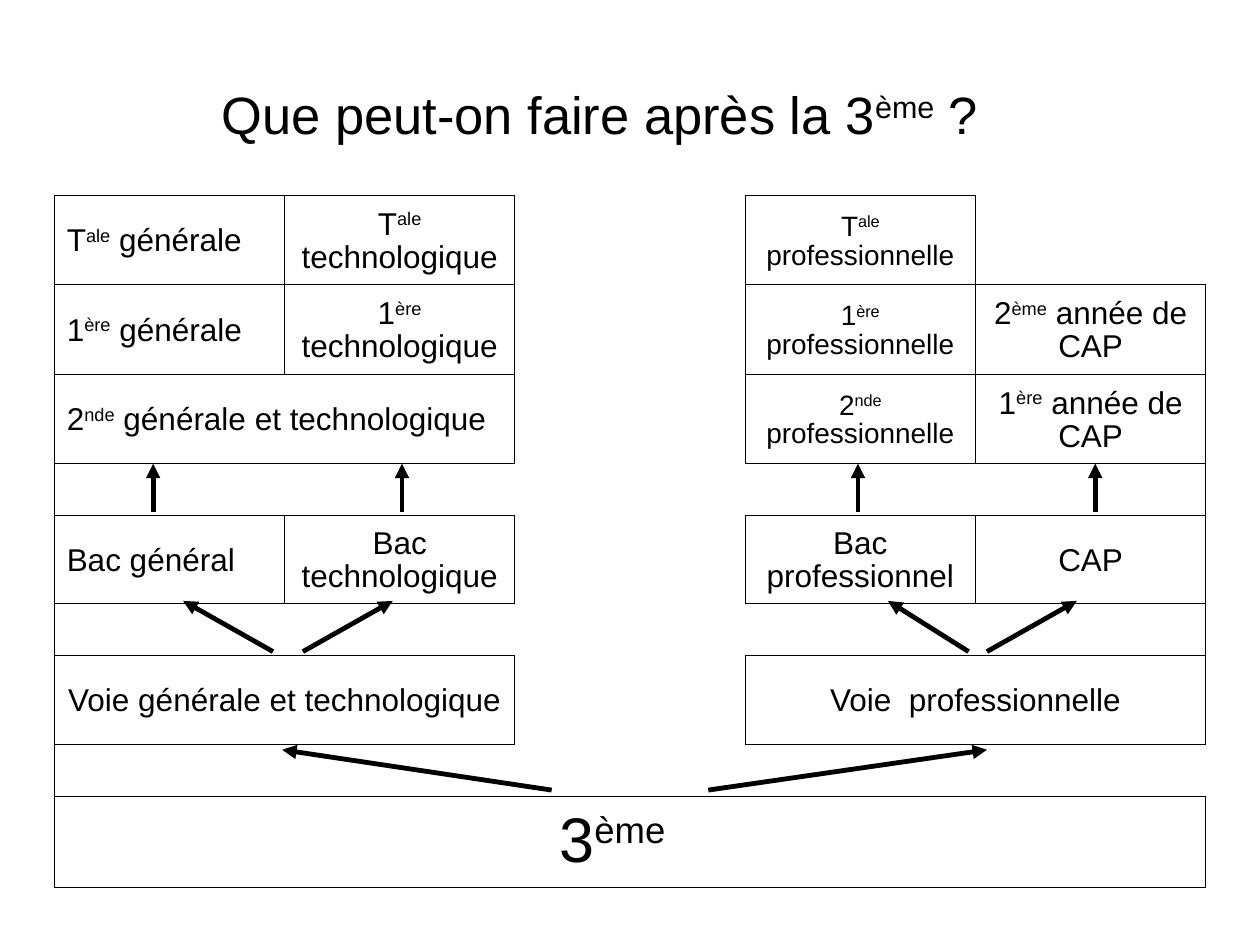
from itertools import accumulate
from lxml.etree import SubElement
from pptx import Presentation
from pptx.dml.color import RGBColor
from pptx.enum.shapes import MSO_CONNECTOR
from pptx.enum.text import MSO_ANCHOR, PP_ALIGN
from pptx.oxml.ns import qn
from pptx.util import Inches, Pt

WIDTH, HEIGHT = 10, 7.5
BLACK = "000000"
LEFT, TOP = 0.43, 1.55
COLUMNS = 5
COLUMN_WIDTH = 9.14 / COLUMNS
ROW_HEIGHTS = [0.71, 0.71, 0.71, 0.41, 0.7, 0.41, 0.71, 0.41, 0.72]
ROW_TOPS = [TOP, *accumulate(ROW_HEIGHTS, initial=TOP)][1:]
GAP_ROWS = (3, 5, 7)
LEFT_ALIGN, CENTER = PP_ALIGN.LEFT, PP_ALIGN.CENTER

# (row, column, columns spanned, text with ^superscript^, size, alignment)
CELLS = [
    (0, 0, 1, "T^ale^ générale", 18, LEFT_ALIGN),
    (0, 1, 1, "T^ale^ technologique", 18, CENTER),
    (0, 3, 1, "T^ale ^professionnelle", 16, CENTER),
    (1, 0, 1, "1^ère^ générale", 18, LEFT_ALIGN),
    (1, 1, 1, "1^ère^ technologique", 18, CENTER),
    (1, 3, 1, "1^ère^ professionnelle", 16, CENTER),
    (1, 4, 1, "2^ème^ année de CAP", 18, CENTER),
    (2, 0, 2, "2^nde^ générale et technologique", 18, LEFT_ALIGN),
    (2, 3, 1, "2^nde^ professionnelle", 16, CENTER),
    (2, 4, 1, "1^ère^ année de CAP", 18, CENTER),
    (4, 0, 1, "Bac général", 18, LEFT_ALIGN),
    (4, 1, 1, "Bac technologique", 18, CENTER),
    (4, 3, 1, "Bac professionnel", 18, CENTER),
    (4, 4, 1, "CAP", 18, CENTER),
    (6, 0, 2, "Voie générale et technologique", 18, CENTER),
    (6, 3, 2, "Voie  professionnelle", 18, CENTER),
    (8, 0, 5, "3^ème^", 36, CENTER),
]
EMPTY_SPANS = [(7, 0, 2), (7, 3, 2)]

ARROW_SHARES = {3: (0.93, 0), 5: (0.93, -0.05), 7: (0.88, 0.1)}
ARROWS = [
    (7, 2.16, 0.99), (7, 2.84, 4.05),
    (3, 0.43, 0.43), (3, 1.51, 1.51), (3, 3.49, 3.49), (3, 4.52, 4.52),
    (5, 0.95, 0.56), (5, 3.97, 3.62), (5, 1.08, 1.47), (5, 4.05, 4.44),
]


def color(value):
    return RGBColor.from_string(value)


def write(text_frame, text, size, alignment):
    text_frame.word_wrap = True
    paragraph = text_frame.paragraphs[0]
    paragraph.alignment = alignment
    paragraph.line_spacing = 0.93
    for index, part in enumerate(text.split("^")):
        run = paragraph.add_run()
        run.text = part
        run.font.size = Pt(size)
        run.font.name = "Arial"
        run.font.color.rgb = color(BLACK)
        if index % 2:
            run._r.get_or_add_rPr().set("baseline", "30000")


def add_title(slide):
    shape = slide.shapes.add_textbox(
        Inches(0.05 * WIDTH), Inches(0.076 * HEIGHT),
        Inches(0.852 * WIDTH), Inches(0.095 * HEIGHT))
    frame = shape.text_frame
    frame.margin_left = frame.margin_top = 0
    frame.margin_right = frame.margin_bottom = 0
    frame.vertical_anchor = MSO_ANCHOR.MIDDLE
    write(frame, "Que peut-on faire après la 3^ème^ ?", 30, CENTER)


def set_borders(cell, sides):
    properties = cell._tc.get_or_add_tcPr()
    for side, visible in sides.items():
        line = SubElement(properties, qn(f"a:ln{side}"), w=str(Pt(0.45)))
        if visible:
            fill = SubElement(line, qn("a:solidFill"))
            SubElement(fill, qn("a:srgbClr"), val=BLACK)
        else:
            SubElement(line, qn("a:noFill"))


def border_sides(row, column, filled):
    def touches(row_step, column_step):
        return bool({(row, column), (row + row_step, column + column_step)} & filled)

    gap = row in GAP_ROWS
    return {
        "L": touches(0, -1) or (gap and column == 0),
        "R": touches(0, 1) or (gap and column == COLUMNS - 1),
        "T": touches(-1, 0),
        "B": touches(1, 0),
    }


def add_grid(slide):
    table = slide.shapes.add_table(
        len(ROW_HEIGHTS), COLUMNS, Inches(LEFT), Inches(TOP),
        Inches(COLUMN_WIDTH * COLUMNS), Inches(sum(ROW_HEIGHTS))).table
    table.first_row = table.horz_banding = False
    for column in table.columns:
        column.width = Inches(COLUMN_WIDTH)
    for row, height in zip(table.rows, ROW_HEIGHTS):
        row.height = Inches(height)

    filled = {(row, column + step)
              for row, column, span, *_ in CELLS for step in range(span)}
    for row in range(len(ROW_HEIGHTS)):
        for column in range(COLUMNS):
            cell = table.cell(row, column)
            set_borders(cell, border_sides(row, column, filled))
            cell.fill.background()

    for row, column, span in [entry[:3] for entry in CELLS] + EMPTY_SPANS:
        if span > 1:
            table.cell(row, column).merge(table.cell(row, column + span - 1))

    for row, column, span, text, size, alignment in CELLS:
        cell = table.cell(row, column)
        full_width = span == COLUMNS
        cell.margin_left = Inches(0.1)
        cell.margin_right = Inches(0.38 if full_width else 0.1)
        cell.margin_top = Inches(0.11 if full_width else 0.08)
        cell.margin_bottom = Inches(0.05)
        cell.vertical_anchor = MSO_ANCHOR.TOP if full_width else MSO_ANCHOR.MIDDLE
        write(cell.text_frame, text, size, alignment)


def add_arrow(slide, row, start_column, end_column):
    start_y, end_y = (
        Inches(ROW_TOPS[row] + share * ROW_HEIGHTS[row]) for share in ARROW_SHARES[row])
    start_x, end_x = (
        Inches(LEFT + column * COLUMN_WIDTH) for column in (start_column, end_column))
    connector = slide.shapes.add_connector(
        MSO_CONNECTOR.STRAIGHT, start_x, start_y, end_x, end_y)
    connector.line.color.rgb = color(BLACK)
    connector.line.width = Pt(2.75)
    SubElement(connector.line._get_or_add_ln(), qn("a:tailEnd"), type="triangle")
    SubElement(connector._element.spPr, qn("a:effectLst"))


def main():
    presentation = Presentation()
    presentation.slide_width = Inches(WIDTH)
    presentation.slide_height = Inches(HEIGHT)
    slide = presentation.slides.add_slide(presentation.slide_layouts[6])
    add_title(slide)
    add_grid(slide)
    for arrow in ARROWS:
        add_arrow(slide, *arrow)
    presentation.save("out.pptx")


if __name__ == "__main__":
    main()
